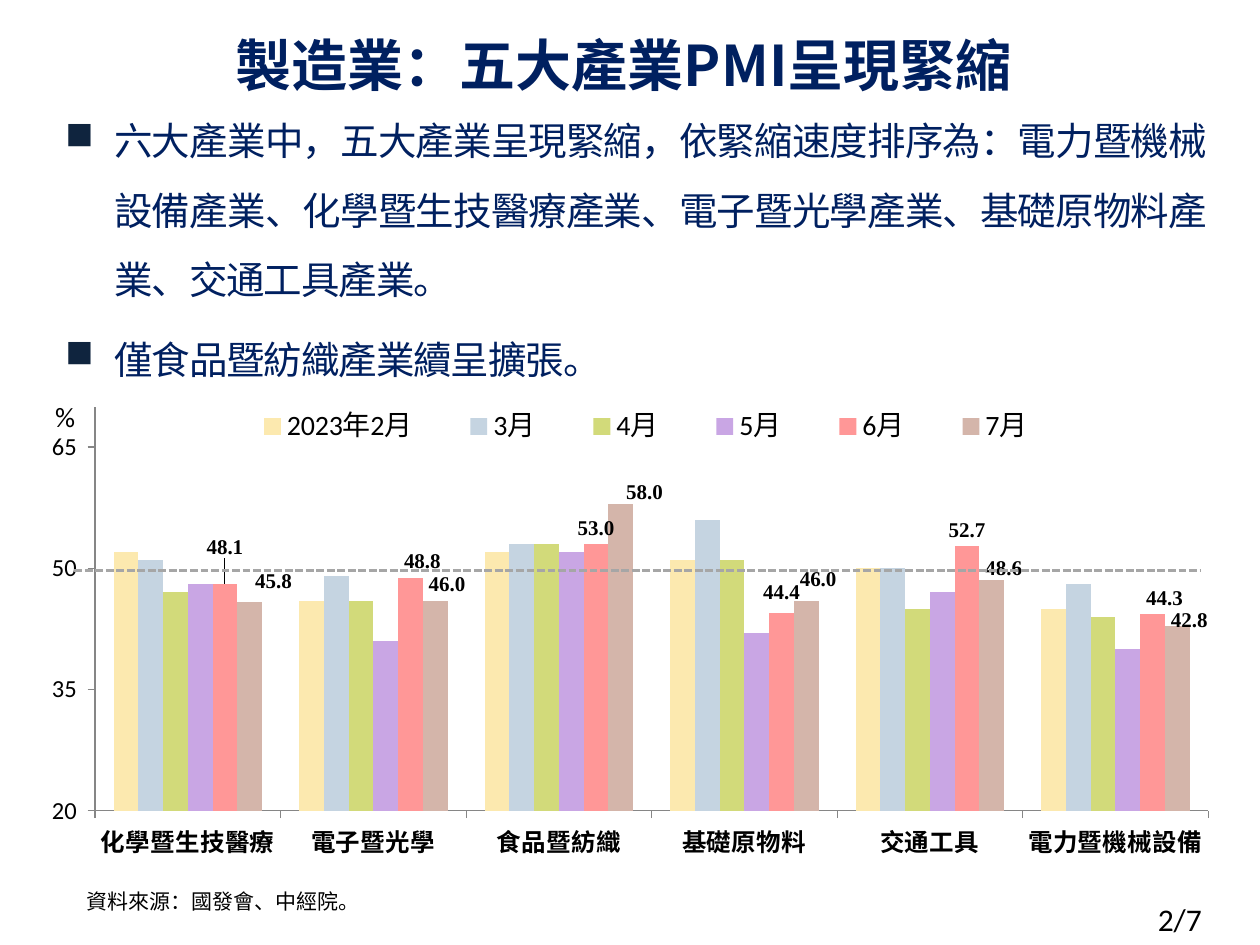
from lxml.etree import SubElement
from pptx import Presentation
from pptx.chart.data import CategoryChartData
from pptx.dml.color import RGBColor
from pptx.enum.chart import XL_CHART_TYPE as ChartType, XL_LABEL_POSITION as LabelPosition
from pptx.enum.chart import XL_LEGEND_POSITION as LegendPosition, XL_TICK_MARK as TickMark
from pptx.enum.dml import MSO_LINE as LineStyle
from pptx.enum.shapes import MSO_CONNECTOR as Connector, MSO_SHAPE as Shape
from pptx.enum.text import MSO_ANCHOR as Anchor, PP_ALIGN as Align
from pptx.oxml.ns import qn
from pptx.util import Inches, Pt

NAVY = RGBColor(0x00, 0x20, 0x60)
BLACK = RGBColor(0x00, 0x00, 0x00)
GREY = RGBColor(0xA6, 0xA6, 0xA6)
AXIS_GREY = RGBColor(0x86, 0x86, 0x86)
CJK = "Noto Sans CJK SC"

deck = Presentation()
deck.slide_width, deck.slide_height = Inches(10), Inches(7.5)
page = deck.slides.add_slide(deck.slide_layouts[5])


def percent(*shares):
    sides = (deck.slide_width, deck.slide_height) * 2
    return [int(side * share / 100) for side, share in zip(sides, shares)]


def style(font, name, size, color=BLACK, bold=False):
    font.name, font.size, font.bold = name, Pt(size), bold
    font.color.rgb = color


title = page.shapes.title
title.left, title.top, title.width, title.height = percent(0, 0, 100, 13.33)
title.text_frame.text = "製造業：五大產業PMI呈現緊縮 "
title.text_frame.vertical_anchor = Anchor.MIDDLE
para = title.text_frame.paragraphs[0]
para.alignment, para.line_spacing = Align.CENTER, Pt(40)
style(para.font, CJK, 32, NAVY, True)

CATEGORIES = ["化學暨生技醫療", "電子暨光學", "食品暨紡織", "基礎原物料", "交通工具", "電力暨機械設備"]
SERIES = [
    ("2023年2月", "FCE9AF", (52, 46, 52, 51, 50, 45)),
    ("3月", "C5D4E1", (51, 49, 53, 56, 50, 48)),
    ("4月", "D2DA7A", (47, 46, 53, 51, 45, 44)),
    ("5月", "C9A6E4", (48, 41, 52, 42, 47, 40)),
    ("6月", "FF9797", (48.1, 48.8, 53, 44.4, 52.7, 44.3)),
    ("7月", "D4B5AA", (45.8, 46, 58, 46, 48.6, 42.8)),
]
LABEL_SHIFTS = {
    "6月": [(0, -0.04), (0.01, 0), (0, 0), (0, -0.01), (0, 0), (0.01, 0)],
    "7月": [(0.02, -0.01), (0.01, 0), (0.02, 0.01), (0.01, -0.01), (0.01, 0.01), (0.01, 0.02)],
}
data = CategoryChartData()
data.categories = CATEGORIES
for name, color, values in SERIES:
    data.add_series(name, values)
chart = page.shapes.add_chart(
    ChartType.COLUMN_CLUSTERED, *percent(2.8, 39.07, 95, 52.8), data).chart
style(chart.font, "Calibri", 18)
chart.has_title = False
chart.has_legend = True
chart.legend.position = LegendPosition.TOP
chart.legend.include_in_layout = False
style(chart.legend.font, "Calibri", 16)

values_axis, names_axis = chart.value_axis, chart.category_axis
values_axis.minimum_scale, values_axis.maximum_scale, values_axis.major_unit = 20, 70, 15
values_axis.has_major_gridlines = False
values_axis.tick_labels.number_format = "0_ ;[Red]\\-0\\ "
values_axis.tick_labels.number_format_is_linked = False
style(values_axis.tick_labels.font, "Calibri", 14)
style(names_axis.tick_labels.font, CJK, 14, bold=True)
for axis in (values_axis, names_axis):
    axis.major_tick_mark = TickMark.OUTSIDE
    axis.format.line.color.rgb = AXIS_GREY
    axis.format.line.width = Pt(0.75)

plot = chart.plots[0]
plot.gap_width, plot.overlap, plot.vary_by_categories = 150, 0, False
for series, (name, color, values) in zip(plot.series, SERIES):
    series.format.fill.solid()
    series.format.fill.fore_color.rgb = RGBColor.from_string(color)
    if name not in LABEL_SHIFTS:
        continue
    labels = series.data_labels
    labels.show_value, labels.position = True, LabelPosition.OUTSIDE_END
    labels.number_format, labels.number_format_is_linked = "0.0", False
    style(labels.font, "Times New Roman", 12, bold=True)
    for index, shift in enumerate(LABEL_SHIFTS[name]):
        if shift == (0, 0):
            continue
        label = series.points[index].data_label
        label.position = LabelPosition.OUTSIDE_END
        style(label.font, "Times New Roman", 12, bold=True)
        node = series.data_labels._element.xpath(f"c:dLbl[c:idx/@val='{index}']")[0]
        layout = SubElement(node, qn("c:layout"))
        manual = SubElement(layout, qn("c:manualLayout"))
        for tag, share in zip("xy", shift):
            SubElement(manual, qn(f"c:{tag}")).set("val", str(share))
        number = SubElement(node, qn("c:numFmt"))
        number.set("formatCode", "0.0")
        number.set("sourceLinked", "0")
        node.insert(1, layout)
        node.insert(2, number)

plot_area = chart.element.find(".//" + qn("c:plotArea"))
legend = chart.element.find(".//" + qn("c:legend"))
for part, position, target, box in [
    (plot_area, 0, "inner", (0.05, 0.075, 0.93, 0.81)),
    (legend, 1, None, (0.15, 0.07, 0.72, 0.09)),
]:
    for old in part.findall(qn("c:layout")):
        part.remove(old)
    layout = SubElement(part, qn("c:layout"))
    manual = SubElement(layout, qn("c:manualLayout"))
    if target:
        SubElement(manual, qn("c:layoutTarget")).set("val", target)
    for tag in ("xMode", "yMode"):
        SubElement(manual, qn(f"c:{tag}")).set("val", "edge")
    for tag, share in zip("xywh", box):
        SubElement(manual, qn(f"c:{tag}")).set("val", str(share))
    part.insert(position, layout)

threshold = page.shapes.add_connector(Connector.STRAIGHT, *percent(5.9, 60.4, 95.3, 60.4))
threshold.line.color.rgb, threshold.line.width = GREY, Pt(1.5)
threshold.line.dash_style = LineStyle.SQUARE_DOT
SubElement(threshold._element.spPr, qn("a:effectLst"))

body = page.shapes.add_shape(Shape.ROUNDED_RECTANGLE, *percent(2.1, 8.53, 95.7, 30))
body.shadow.inherit = False
body.fill.background()
body.line.fill.background()
frame = body.text_frame
frame.word_wrap, frame.vertical_anchor = True, Anchor.TOP
frame.margin_top = frame.margin_bottom = 0
frame.text = (
    "六大產業中，五大產業呈現緊縮，依緊縮速度排序為：電力暨機械設備產業、"
    "化學暨生技醫療產業、電子暨光學產業、基礎原物料產業、交通工具產業。\n"
    "僅食品暨紡織產業續呈擴張。"
)
for para in frame.paragraphs:
    para.alignment, para.line_spacing, para.space_before = Align.JUSTIFY, 1.5, Pt(6)
    style(para.font, CJK, 22, NAVY)
    properties = para._p.get_or_add_pPr()
    properties.set("marL", str(Inches(0.49)))
    properties.set("indent", str(-Inches(0.39)))
    defaults = properties.find(qn("a:defRPr"))
    defaults.set("spc", "-60")
    bullet_color = SubElement(properties, qn("a:buClr"))
    SubElement(bullet_color, qn("a:srgbClr")).set("val", "0F243E")
    SubElement(properties, qn("a:buChar")).set("char", "■")
    properties.append(defaults)

for text, area, font_name, size in [
    ("資料來源：國發會、中經院。", (5.9, 93.87, 94, 3.6), "Noto Sans CJK JP", 12),
    ("%", (3.4, 41.6, 6.3, 4.93), "Calibri", 16),
    ("2/7", (90.9, 94.53, 9.1, 5.33), "Calibri", 18),
]:
    box = page.shapes.add_textbox(*percent(*area))
    box.text_frame.word_wrap = True
    box.text_frame.text = text
    para = box.text_frame.paragraphs[0]
    style(para.font, font_name, size)
    if size == 12:
        para.line_spacing, para.space_before = Pt(12), Pt(2)

for root in (page.element, chart.element):
    for latin in list(root.iter(qn("a:latin"))):
        east_asian = SubElement(latin.getparent(), qn("a:ea"))
        east_asian.set("typeface", latin.get("typeface"))
        latin.addnext(east_asian)

deck.save("out.pptx")
